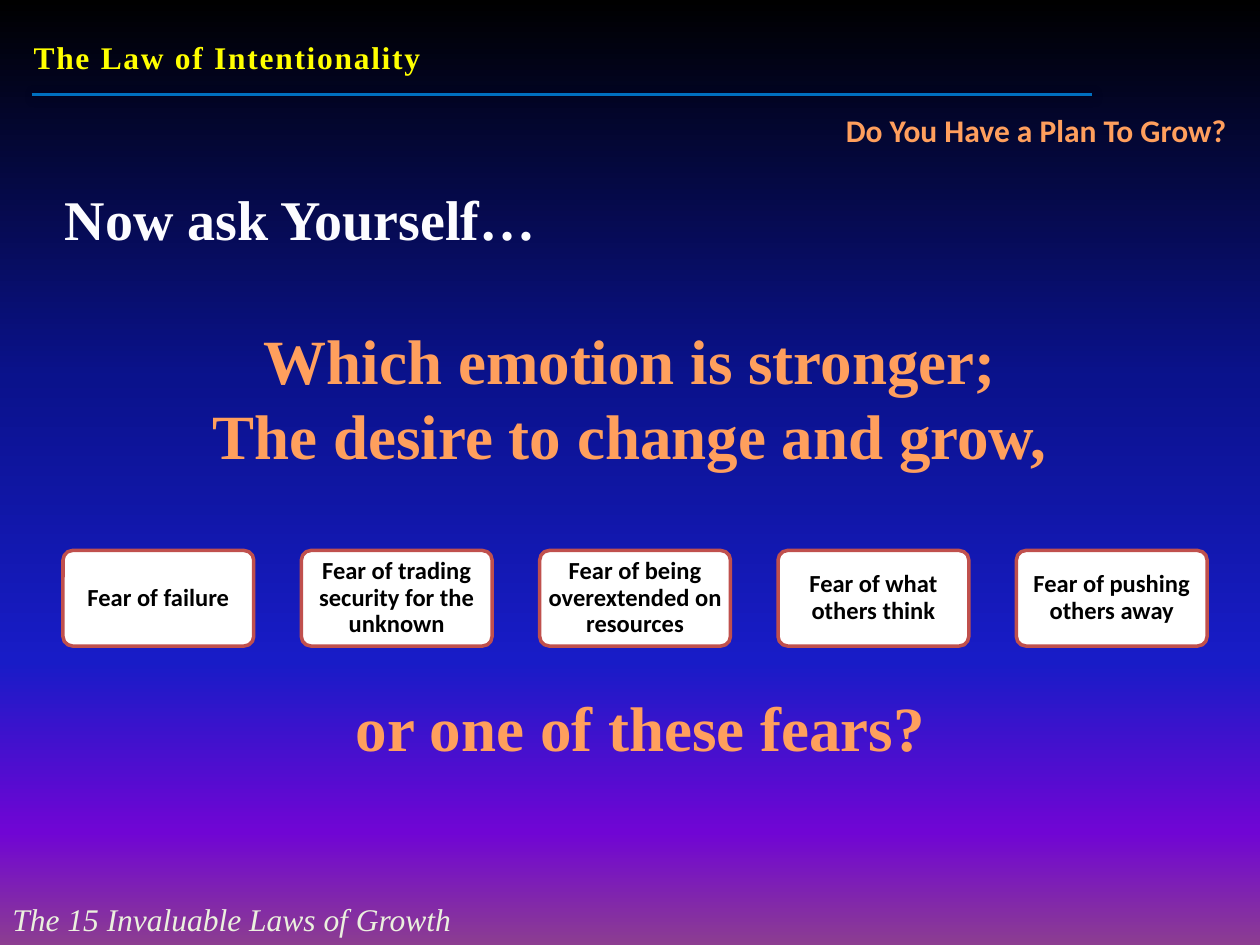
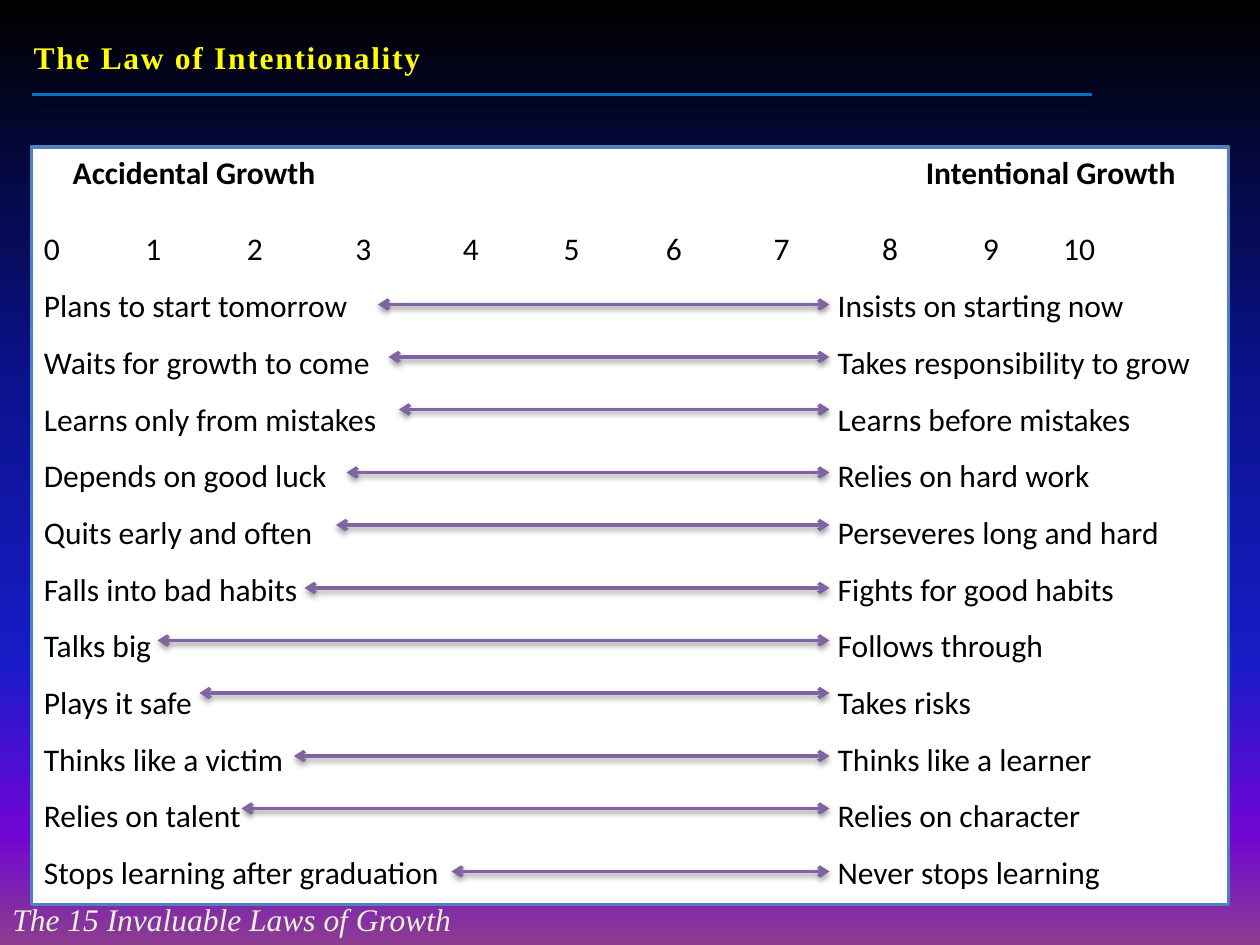
from lxml import etree
from pptx import Presentation
from pptx.dml.color import RGBColor
from pptx.enum.shapes import MSO_CONNECTOR, MSO_SHAPE
from pptx.enum.text import MSO_ANCHOR, PP_ALIGN
from pptx.oxml.ns import qn
from pptx.util import Pt

LEFT, CENTER, RIGHT = PP_ALIGN.LEFT, PP_ALIGN.CENTER, PP_ALIGN.RIGHT
TOP, MIDDLE = MSO_ANCHOR.TOP, MSO_ANCHOR.MIDDLE
STRAIGHT = MSO_CONNECTOR.STRAIGHT
RECTANGLE, ROUNDED = MSO_SHAPE.RECTANGLE, MSO_SHAPE.ROUNDED_RECTANGLE
SERIF, SANS = "Times New Roman", "Calibri"
COLORS = {
    "title": "FFFF00", "rule": "0070C0", "footer": "EBF1DE", "accent": "FF9F5D",
    "prompt": "FCFCFF", "white": "FFFFFF", "black": "000000",
    "fear": "C0504D", "panel": "4F81BD", "arrow": "8064A2",
}
BACKGROUND_STOPS = [(0, "000000"), (40, "0A128C"), (70, "181CC7"), (88, "7005D4"), (100, "8C3D91")]
RULE_SHADOW = {"alpha": 20, "blur": 6, "distance": 1, "angle": 45}
ARROW_SHADOW = {"alpha": 38, "blur": 3.1, "distance": 1.6, "angle": 90}


def write_text(shape, text, size, color, font=SERIF, align=LEFT, anchor=TOP, bold=True, italic=False):
    frame = shape.text_frame
    frame.word_wrap = True
    frame.vertical_anchor = anchor
    frame.text = text
    for paragraph in frame.paragraphs:
        paragraph.alignment = align
        for run in paragraph.runs:
            run.font.name = font
            run.font.size = Pt(size)
            run.font.bold = bold
            run.font.italic = italic
            run.font.color.rgb = RGBColor.from_string(COLORS[color])


def add_line(slide, start, end, y, color, width, shadow):
    line = slide.shapes.add_connector(STRAIGHT, Pt(start), Pt(y), Pt(end), Pt(y))
    line.line.color.rgb = RGBColor.from_string(COLORS[color])
    line.line.width = Pt(width)
    effects = etree.SubElement(line._element.spPr, qn("a:effectLst"))
    outer = etree.SubElement(
        effects, qn("a:outerShdw"), blurRad=str(int(Pt(shadow["blur"]))),
        dist=str(int(Pt(shadow["distance"]))), dir=str(shadow["angle"] * 60000), rotWithShape="0")
    tint = etree.SubElement(outer, qn("a:srgbClr"), val=COLORS["black"])
    etree.SubElement(tint, qn("a:alpha"), val=str(shadow["alpha"] * 1000))
    return line


presentation = Presentation()
presentation.slide_width = Pt(720)
presentation.slide_height = Pt(540)

master = presentation.slide_master
background = master.background.fill
background.gradient()
background.gradient_angle = 270
stop_list = master.element.find(".//" + qn("a:gsLst"))
for stop in list(stop_list):
    stop_list.remove(stop)
for position, color in BACKGROUND_STOPS:
    stop = etree.SubElement(stop_list, qn("a:gs"), pos=str(position * 1000))
    etree.SubElement(stop, qn("a:srgbClr"), val=color)

slides = [presentation.slides.add_slide(presentation.slide_layouts[5]) for _ in range(2)]
for slide in slides:
    title = slide.shapes.title
    title.left, title.top, title.width, title.height = Pt(12), Pt(18), Pt(696), Pt(29)
    write_text(title, "The Law of Intentionality", 18, "title")
    title.text_frame.paragraphs[0].runs[0].font._element.set("spc", "100")
    add_line(slide, 18, 624, 54, "rule", 1.5, RULE_SHADOW)
    footer = slide.shapes.add_textbox(Pt(0), Pt(511), Pt(330), Pt(29))
    write_text(footer, "The 15 Invaluable Laws of Growth", 18, "footer", bold=False, italic=True)

question_slide, scale_slide = slides

statements = [
    ("Now ask Yourself…", 30, 102, 510, 46, 32, "prompt", SERIF, LEFT),
    ("Do You Have a Plan To Grow?", 372, 60, 336, 51, 18, "accent", SANS, RIGHT),
    ("Which emotion is stronger;\nThe desire to change and grow,", 36, 180, 648, 94, 36, "accent", SERIF, CENTER),
    ("or one of these fears?", 72, 390, 588, 51, 36, "accent", SERIF, CENTER),
]
for text, left, top, width, height, size, color, font, align in statements:
    box = question_slide.shapes.add_textbox(Pt(left), Pt(top), Pt(width), Pt(height))
    write_text(box, text, size, color, font, align)

fears = [
    "Fear of failure",
    "Fear of trading security for the unknown",
    "Fear of being overextended on resources",
    "Fear of what others think",
    "Fear of pushing others away",
]
for index, fear in enumerate(fears):
    card = question_slide.shapes.add_shape(ROUNDED, Pt(36 + 136.2 * index), Pt(314.6), Pt(109), Pt(54.6))
    card.adjustments[0] = 0.1
    card.shadow.inherit = False
    card.fill.solid()
    card.fill.fore_color.rgb = RGBColor.from_string(COLORS["white"])
    card.line.color.rgb = RGBColor.from_string(COLORS["fear"])
    card.line.width = Pt(2)
    write_text(card, fear, 14, "black", SANS, CENTER, MIDDLE)
    frame = card.text_frame
    frame.margin_left = frame.margin_right = Pt(2.5)
    frame.margin_top = frame.margin_bottom = Pt(1.5)
    frame.paragraphs[0].line_spacing = 0.9

contrasts = [
    ("Plans to start tomorrow", "Insists on starting now", 216, 174),
    ("Waits for growth to come", "Takes responsibility to grow", 222, 204),
    ("Learns only from mistakes", "Learns before mistakes", 228, 234),
    ("Depends on good luck", "Relies on hard work", 198, 270),
    ("Quits early and often", "Perseveres long and hard", 192, 300),
    ("Falls into bad habits", "Fights for good habits", 174, 336),
    ("Talks big", "Follows through", 90, 366),
    ("Plays it safe", "Takes risks", 114, 396),
    ("Thinks like a victim", "Thinks like a learner", 168, 432),
    ("Relies on talent", "Relies on character", 138, 462),
    ("Stops learning after graduation", "Never stops learning", 258, 498),
]
heading = "\tAccidental Growth\tIntentional Growth"
scale = "\t".join(str(number) for number in range(11))
lines = [heading, scale] + [f"{accidental}\t{intentional}" for accidental, intentional, _, _ in contrasts]
tab_stops = [[16.5, 504], [58, 116, 178, 239.5, 297, 355.5, 417, 479, 536.5, 582.5]]
tab_stops += [[453.6]] * len(contrasts)

panel = scale_slide.shapes.add_shape(RECTANGLE, Pt(18), Pt(84), Pt(684), Pt(433))
panel.shadow.inherit = False
panel.fill.solid()
panel.fill.fore_color.rgb = RGBColor.from_string(COLORS["white"])
panel.line.color.rgb = RGBColor.from_string(COLORS["panel"])
panel.line.width = Pt(2)
write_text(panel, "\n".join(lines), 18, "black", SANS, bold=False)
paragraphs = panel.text_frame.paragraphs
for run in paragraphs[0].runs:
    run.font.bold = True
paragraphs[0].space_after = Pt(22)
for paragraph in paragraphs[2:]:
    paragraph.line_spacing = 1.5
for paragraph, stops in zip(paragraphs, tab_stops):
    tab_list = etree.SubElement(paragraph._p.get_or_add_pPr(), qn("a:tabLst"))
    for stop in stops:
        etree.SubElement(tab_list, qn("a:tab"), pos=str(int(Pt(stop))), algn="l")

for _, _, start, y in contrasts:
    arrow = add_line(scale_slide, start, 474, y, "arrow", 2, ARROW_SHADOW)
    outline = arrow.line._get_or_add_ln()
    for end in ("a:headEnd", "a:tailEnd"):
        etree.SubElement(outline, qn(end), type="arrow")

presentation.save("out.pptx")
